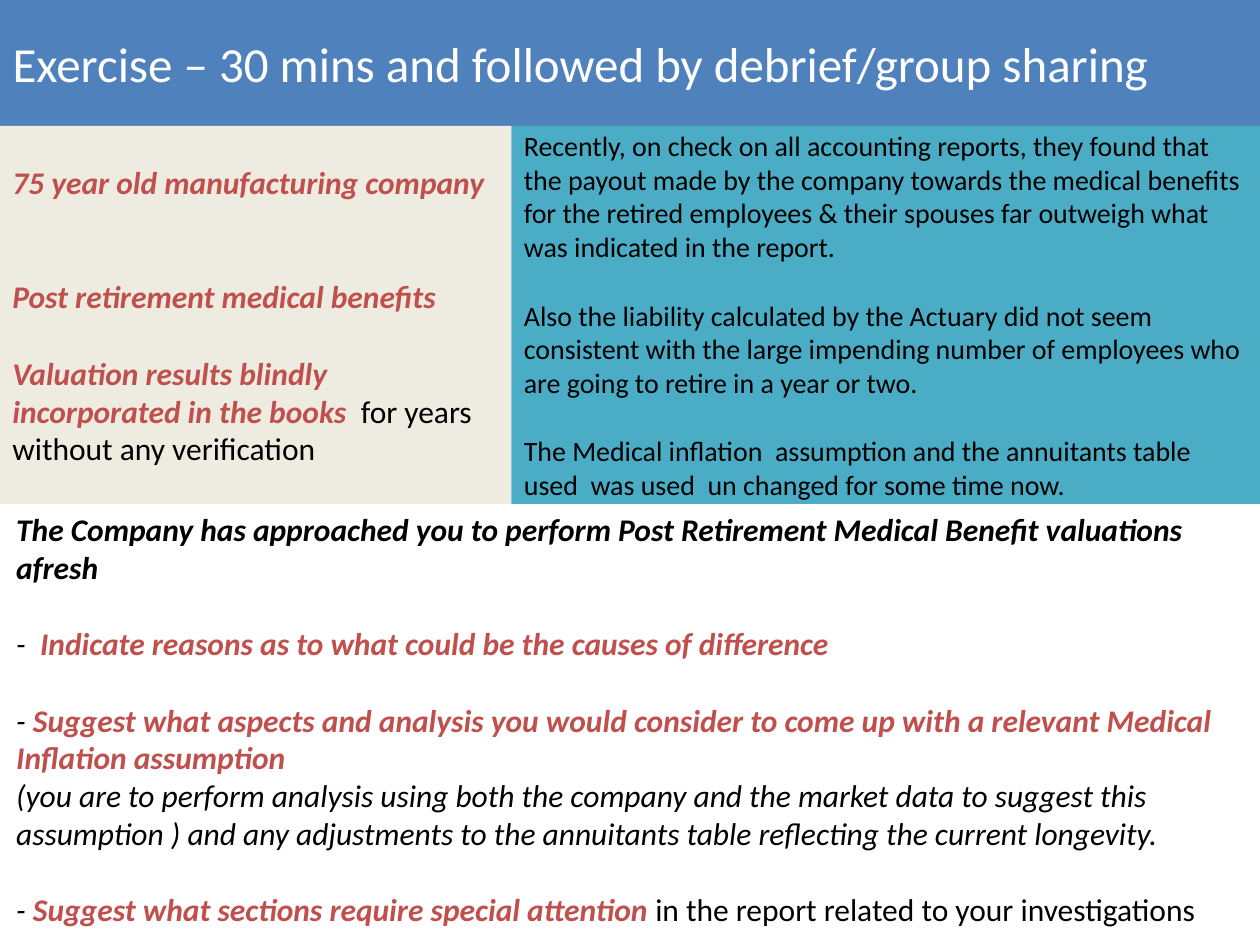
from dataclasses import dataclass

import pptx
import pptx.dml.color
import pptx.enum.shapes
import pptx.enum.text
import pptx.util

RGBColor = pptx.dml.color.RGBColor
ANCHOR = pptx.enum.text.MSO_ANCHOR
AUTO_SIZE = pptx.enum.text.MSO_AUTO_SIZE

EMU_PER_PX = 9144  # 100 px to the inch
SLIDE_WIDTH, SLIDE_HEIGHT = 1000, 750
BANNER_HEIGHT, PANEL_HEIGHT = 100, 300
COMPANY_WIDTH = 406
TASKS_TOP = BANNER_HEIGHT + PANEL_HEIGHT

FONT = "Calibri"
LINE_HEIGHT = 1.22  # of the font size

BLACK = RGBColor(0x00, 0x00, 0x00)
WHITE = RGBColor(0xFF, 0xFF, 0xFF)
RED = RGBColor(0xC0, 0x50, 0x4D)
BLUE = RGBColor(0x4F, 0x81, 0xBD)
CREAM = RGBColor(0xEE, 0xEC, 0xE1)
TEAL = RGBColor(0x4B, 0xAC, 0xC6)


@dataclass(frozen=True)
class Phrase:
    text: str
    color: RGBColor = BLACK
    bold: bool = False
    italic: bool = False


@dataclass(frozen=True)
class Passage:
    phrases: list[Phrase]
    lines_before: int = 0


@dataclass(frozen=True)
class Box:
    left: int
    top: int
    width: int
    height: int


def px(length: int) -> pptx.util.Emu:
    return pptx.util.Emu(length * EMU_PER_PX)


def key(text: str) -> Phrase:
    """Red bold italic wording that stands out."""
    return Phrase(text, RED, bold=True, italic=True)


def aside(text: str) -> Phrase:
    return Phrase(text, italic=True)


def place(shape, box: Box) -> None:
    shape.left, shape.top = px(box.left), px(box.top)
    shape.width, shape.height = px(box.width), px(box.height)


def paint(shape, color: RGBColor) -> None:
    shape.fill.solid()
    shape.fill.fore_color.rgb = color
    shape.line.fill.background()


def write(frame, passages: list[Passage], size: int, anchor: ANCHOR = ANCHOR.MIDDLE) -> None:
    frame.word_wrap = True
    frame.vertical_anchor = anchor
    for index, passage in enumerate(passages):
        paragraph = frame.add_paragraph() if index else frame.paragraphs[0]
        paragraph.alignment = pptx.enum.text.PP_ALIGN.LEFT
        paragraph.space_before = pptx.util.Pt(round(passage.lines_before * size * LINE_HEIGHT))
        for phrase in passage.phrases:
            run = paragraph.add_run()
            run.text = phrase.text
            run.font.name = FONT
            run.font.size = pptx.util.Pt(size)
            run.font.bold = phrase.bold
            run.font.italic = phrase.italic
            run.font.color.rgb = phrase.color


def add_panel(slide, box: Box, color: RGBColor, passages: list[Passage], size: int) -> None:
    panel = slide.shapes.add_shape(pptx.enum.shapes.MSO_SHAPE.RECTANGLE, 0, 0, 0, 0)
    place(panel, box)
    panel.shadow.inherit = False
    paint(panel, color)
    write(panel.text_frame, passages, size)


def set_title(slide, box: Box, color: RGBColor, text: str, size: int) -> None:
    title = slide.shapes.title
    place(title, box)
    paint(title, color)
    title.text_frame.auto_size = AUTO_SIZE.NONE
    write(title.text_frame, [Passage([Phrase(text, WHITE)])], size)


def add_tasks(slide, box: Box, passages: list[Passage], size: int) -> None:
    tasks = slide.shapes.add_textbox(0, 0, 0, 0)
    place(tasks, box)
    write(tasks.text_frame, passages, size, ANCHOR.TOP)
    tasks.text_frame.auto_size = AUTO_SIZE.SHAPE_TO_FIT_TEXT


COMPANY = [
    Passage([key("75 year old manufacturing company")]),
    Passage([key("Post retirement medical benefits")], 2),
    Passage([key("Valuation results blindly incorporated in the books  "),
             Phrase("for years without any verification")], 1),
]

FINDINGS = [
    Passage([Phrase("Recently, on check on all accounting reports, they found that the payout "
                    "made by the company towards the medical benefits for the retired employees "
                    "& their spouses far outweigh what was indicated in the report.")]),
    Passage([Phrase("Also the liability calculated by the Actuary did not seem consistent with "
                    "the large impending number of employees who are going to retire in a year "
                    "or two.")], 1),
    Passage([Phrase("The Medical inflation  assumption and the annuitants table used  was used  "
                    "un changed for some time now.")], 1),
]

TASKS = [
    Passage([Phrase("The Company has approached you to perform Post Retirement Medical Benefit "
                    "valuations afresh", bold=True, italic=True)]),
    Passage([aside("-  "),
             key("Indicate reasons as to what could be the causes of difference")], 1),
    Passage([aside("- "),
             key("Suggest what aspects and analysis you would consider to come up with a "
                 "relevant Medical Inflation assumption")], 1),
    Passage([aside("(you are to perform analysis using both the company and the market data to "
                   "suggest this assumption ) and any adjustments to the annuitants table "
                   "reflecting the current longevity.")]),
    Passage([aside("- "),
             key("Suggest what sections require special attention "),
             Phrase("in the report related to your investigations")], 1),
]


def main() -> None:
    deck = pptx.Presentation()
    deck.slide_width, deck.slide_height = px(SLIDE_WIDTH), px(SLIDE_HEIGHT)
    slide = deck.slides.add_slide(deck.slide_layouts.get_by_name("Title Only"))

    set_title(slide, Box(0, 0, SLIDE_WIDTH, BANNER_HEIGHT), BLUE,
              "Exercise – 30 mins and followed by debrief/group sharing", 28)
    add_panel(slide, Box(0, BANNER_HEIGHT, COMPANY_WIDTH, PANEL_HEIGHT), CREAM, COMPANY, 18)
    add_panel(slide, Box(COMPANY_WIDTH, BANNER_HEIGHT, SLIDE_WIDTH - COMPANY_WIDTH, PANEL_HEIGHT),
              TEAL, FINDINGS, 16)
    add_tasks(slide, Box(3, TASKS_TOP, 983, 343), TASKS, 18)

    deck.save("out.pptx")


if __name__ == "__main__":
    main()
